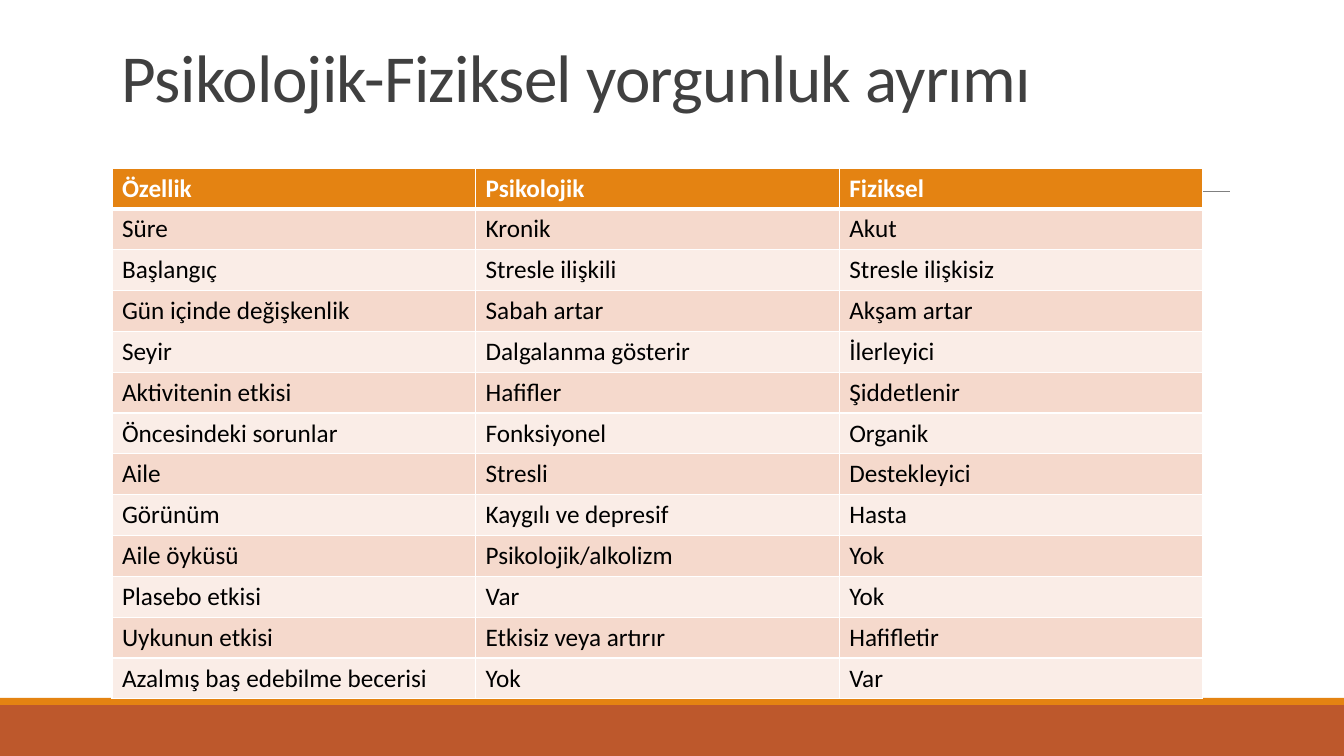
import pptx
import pptx.util
import pptx.dml.color
import pptx.enum.shapes
import pptx.enum.text
import pptx.oxml.ns
import lxml.etree

RGBColor = pptx.dml.color.RGBColor
WHITE = RGBColor(0xFF, 0xFF, 0xFF)
BLACK = RGBColor(0x00, 0x00, 0x00)
GRAY = RGBColor(0x80, 0x80, 0x80)
DARK = RGBColor(0x40, 0x40, 0x40)
ORANGE = RGBColor(0xE4, 0x83, 0x12)
RUST = RGBColor(0xBD, 0x58, 0x2C)
BAND_DARK = RGBColor(0xF5, 0xD9, 0xCC)
BAND_LIGHT = RGBColor(0xFA, 0xED, 0xE7)

FONT = "Calibri"
WIDTH, HEIGHT = 1344, 756
EMU_PER_PX = 914400 / 100.8

ROWS = [
    ("Özellik", "Psikolojik", "Fiziksel"),
    ("Süre", "Kronik", "Akut"),
    ("Başlangıç", "Stresle ilişkili", "Stresle ilişkisiz"),
    ("Gün içinde değişkenlik", "Sabah artar", "Akşam artar"),
    ("Seyir", "Dalgalanma gösterir", "İlerleyici"),
    ("Aktivitenin etkisi", "Hafifler", "Şiddetlenir"),
    ("Öncesindeki sorunlar", "Fonksiyonel", "Organik"),
    ("Aile", "Stresli", "Destekleyici"),
    ("Görünüm", "Kaygılı ve depresif", "Hasta"),
    ("Aile öyküsü", "Psikolojik/alkolizm", "Yok"),
    ("Plasebo etkisi", "Var", "Yok"),
    ("Uykunun etkisi", "Etkisiz veya artırır", "Hafifletir"),
    ("Azalmış baş edebilme becerisi", "Yok", "Var"),
]


def px(n):
    return pptx.util.Emu(round(n * EMU_PER_PX))


def add_run(p, text, size, color, bold=False):
    r = p.add_run()
    r.text = text
    r.font.name = FONT
    r.font.size = pptx.util.Pt(size)
    r.font.bold = bold
    r.font.color.rgb = color
    return r


def add_bar(s, x, y, w, h, color):
    sp = s.shapes.add_shape(
        pptx.enum.shapes.MSO_SHAPE.RECTANGLE, px(x), px(y), px(w), px(h))
    sp.shadow.inherit = False
    sp.fill.solid()
    sp.fill.fore_color.rgb = color
    sp.line.fill.background()


def add_footer(s, x, y, w, h):
    stripe = 7
    add_bar(s, x, y + stripe, w, h - stripe, RUST)
    add_bar(s, x, y, w, stripe, ORANGE)


def add_rule(s, x, y, w):
    line = s.shapes.add_connector(
        pptx.enum.shapes.MSO_CONNECTOR.STRAIGHT, px(x), px(y), px(x + w), px(y))
    line.line.color.rgb = GRAY
    line.line.width = pptx.util.Pt(0.5)
    lxml.etree.SubElement(line._element.spPr, pptx.oxml.ns.qn("a:effectLst"))


def add_title(s, x, y, w, h, text):
    tf = s.shapes.add_textbox(px(x), px(y), px(w), px(h)).text_frame
    tf.word_wrap = True
    tf.vertical_anchor = pptx.enum.text.MSO_ANCHOR.BOTTOM
    p = tf.paragraphs[0]
    p.line_spacing = 0.85
    r = add_run(p, text, 48, DARK)
    r.font._element.set("spc", "-50")


def set_borders(cell, top, bottom):
    qn = pptx.oxml.ns.qn
    tcPr = cell._tc.get_or_add_tcPr()
    for side, width in (("L", 1), ("R", 1), ("T", top), ("B", bottom)):
        ln = lxml.etree.SubElement(
            tcPr, qn("a:ln" + side), w=str(pptx.util.Pt(width)))
        fill = lxml.etree.SubElement(ln, qn("a:solidFill"))
        lxml.etree.SubElement(fill, qn("a:srgbClr"), val=str(WHITE))


def add_comparison(s, x, y, w, h, rows):
    table = s.shapes.add_table(
        len(rows), len(rows[0]), px(x), px(y), px(w), px(h)).table
    for i, texts in enumerate(rows):
        table.rows[i].height = px(h / len(rows))
        header = i == 0
        fill = ORANGE if header else BAND_DARK if i % 2 else BAND_LIGHT
        for j, text in enumerate(texts):
            cell = table.cell(i, j)
            set_borders(cell, 3 if i == 1 else 1, 3 if header else 1)
            cell.fill.solid()
            cell.fill.fore_color.rgb = fill
            p = cell.text_frame.paragraphs[0]
            add_run(p, text, 18, WHITE if header else BLACK, header)


def main():
    prs = pptx.Presentation()
    prs.slide_width, prs.slide_height = px(WIDTH), px(HEIGHT)
    s = prs.slides.add_slide(prs.slide_layouts[6])
    add_footer(s, 0, 698, WIDTH, 58)
    add_rule(s, 132, 191, 1098)
    add_title(s, 112, -39, 1109, 160, "Psikolojik-Fiziksel yorgunluk ayrımı")
    add_comparison(s, 112, 168, 1091, 531, ROWS)
    prs.save("out.pptx")


if __name__ == "__main__":
    main()
